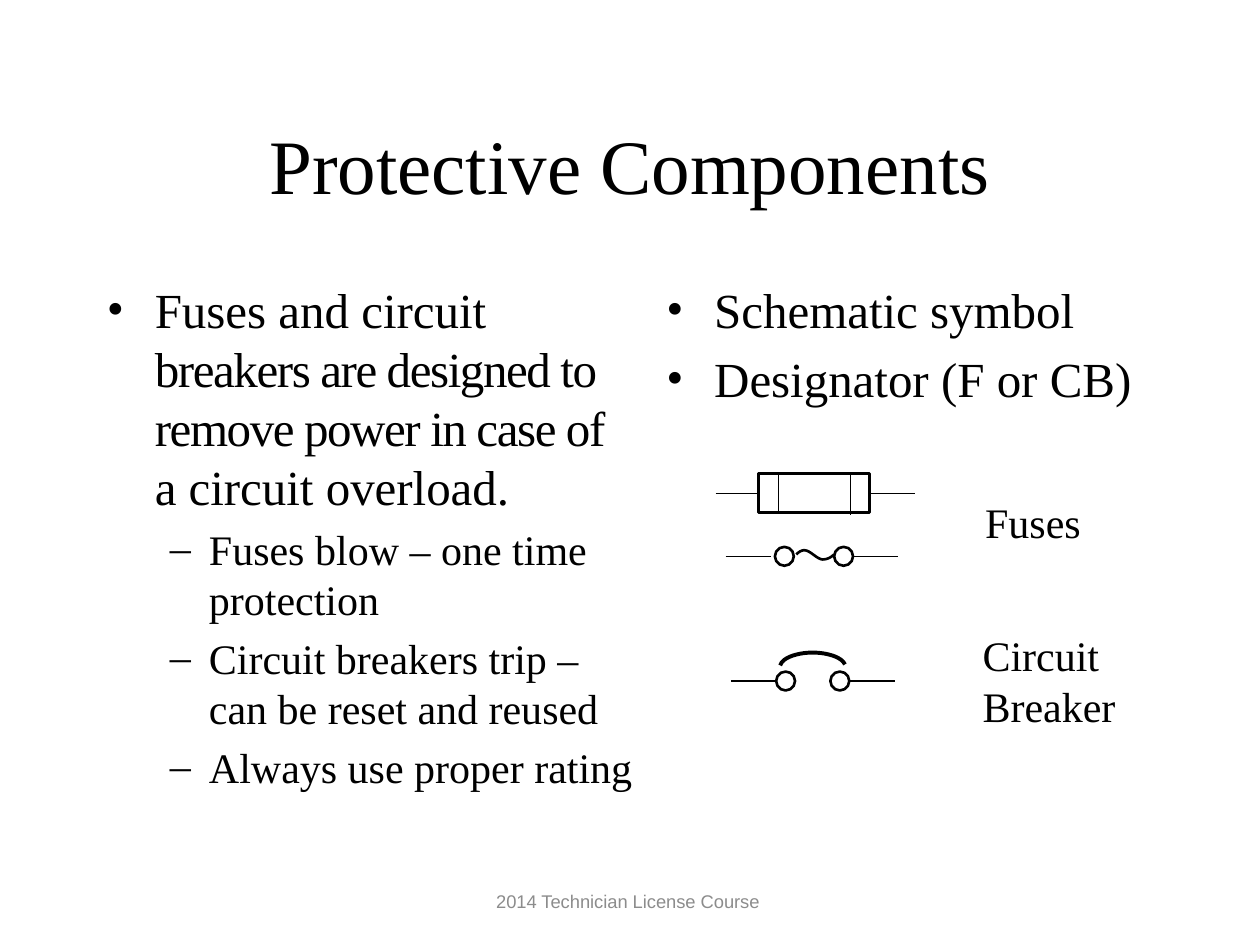
from lxml import etree
from pptx import Presentation
from pptx import util as u
from pptx.dml.color import RGBColor
from pptx.enum import shapes as s, text as t
from pptx.oxml.ns import qn

BLACK = RGBColor(0, 0, 0)
GRAY = RGBColor(0x8C, 0x8C, 0x8C)
SERIF = "Times New Roman"
COLS, ROWS = 100, 75
WIDTH, HEIGHT = u.Inches(10), u.Inches(7.5)
DOT = 1.5
LEVELS = [("•", 0.38, 0.38, 28), ("–", 0.81, 0.31, 24)]


def col(n):
    """Turn grid columns into a length."""
    return round(WIDTH * n / COLS)


def row(n):
    """Turn grid rows into a length."""
    return round(HEIGHT * n / ROWS)


def place(x, y, w, h):
    """Turn a grid box into left, top, width and height."""
    return col(x), row(y), col(w), row(h)


def style(para, size, name=SERIF, color=BLACK):
    """Set the font of a paragraph."""
    font = para.font
    font.size, font.name = u.Pt(size), name
    font.color.rgb = color


def frame(slide, box, wrap=True):
    """Add a text box and return its frame."""
    body = slide.shapes.add_textbox(*place(*box)).text_frame
    body.word_wrap = wrap
    return body


def center(slide, box, words, *look):
    """Write one line in the middle of a box."""
    body = frame(slide, box)
    body.vertical_anchor = t.MSO_ANCHOR.MIDDLE
    para = body.paragraphs[0]
    para.text, para.alignment = words, t.PP_ALIGN.CENTER
    style(para, *look)


def label(slide, box, lines):
    """Write an unwrapped label, one paragraph a line."""
    body = frame(slide, box, False)
    body.auto_size = t.MSO_AUTO_SIZE.SHAPE_TO_FIT_TEXT
    body.text = "\n".join(lines)
    for para in body.paragraphs:
        style(para, 24)


def bullets(slide, box, items):
    """Write a list of (level, runs), each run being (words, spacing)."""
    body = frame(slide, box)
    for i, (level, runs) in enumerate(items):
        para = body.add_paragraph() if i else body.paragraphs[0]
        mark, left, hang, size = LEVELS[level]
        para.level = level
        if i:
            para.space_before = u.Pt(size * 0.2)
        props = para._p.get_or_add_pPr()
        props.set("marL", str(u.Inches(left)))
        props.set("indent", str(-u.Inches(hang)))
        etree.SubElement(props, qn("a:buFont")).set("typeface", SERIF)
        etree.SubElement(props, qn("a:buChar")).set("char", mark)
        style(para, size)
        for words, space in runs:
            if words == "\n":
                para.add_line_break()
                continue
            run = para.add_run()
            run.text = words
            if space:
                run.font._element.set("spc", str(space))


def ink(shape, width):
    """Give a shape a plain black outline."""
    shape.shadow.inherit = False
    shape.fill.background()
    shape.line.color.rgb, shape.line.width = BLACK, u.Pt(width)
    return shape


def outline(slide, kind, box, width=1.5):
    """Add an unfilled preset shape."""
    return ink(slide.shapes.add_shape(kind, *place(*box)), width)


def wire(slide, x, y, dx=0, dy=0):
    """Draw a thin straight line."""
    line = slide.shapes.add_connector(
        s.MSO_CONNECTOR.STRAIGHT, col(x), row(y), col(x + dx), row(y + dy))
    line.line.color.rgb, line.line.width = BLACK, u.Pt(0.75)
    etree.SubElement(line._element.spPr, qn("a:effectLst"))
    return line


def curve(slide, start, arcs):
    """Draw an open line through cubic arcs."""
    points = [start]
    for a, b, end in arcs:
        first = points[-1]
        for i in range(1, 13):
            k = i / 12
            j = 1 - k
            points.append(tuple(
                j**3 * p + 3 * j * j * k * q + 3 * j * k * k * r + k**3 * e
                for p, q, r, e in zip(first, a, b, end)))
    path = [(col(x), row(y)) for x, y in points]
    build = slide.shapes.build_freeform(*path[0])
    build.add_line_segments(path[1:], close=False)
    ink(build.convert_to_shape(), 1.5)


def capsule(slide, box):
    """Draw the boxed fuse with its end caps and leads."""
    x, y, w, h = box
    lead, mid = 3.4, y + h / 2
    case = outline(slide, s.MSO_SHAPE.RECTANGLE, (x + lead, y, w - 2 * lead - 0.2, h))
    wire(slide, x + lead + 1.6, y, dy=h)
    wire(slide, x + w - lead - 1.7, y + 0.1, dy=h + 0.1)
    wire(slide, x, mid, lead).end_connect(case, 1)
    wire(slide, x + w - lead, mid, lead).begin_connect(case, 3)


def contacts(slide, box, near, far):
    """Draw two round contacts with a lead at each side."""
    x, y, w, h = box
    for at in (near, far):
        outline(slide, s.MSO_SHAPE.OVAL, (x + at, y, DOT, DOT))
    wire(slide, x, y + h / 2, 3.6)
    wire(slide, x + w - 3.6, y + h / 2, 3.6)


def link(slide, box):
    """Draw the open fuse: two contacts joined by a wave."""
    x, y = box[:2]
    contacts(slide, box, 3.9, 8.6)
    arcs = [((8.4, 0.8), (8.1, 1), (7.7, 1)),
            ((7.3, 1), (6.8, 0.4), (6.4, 0.3)),
            ((6.1, 0.2), (5.8, 0.4), (5.6, 0.6))]
    curve(slide, (x + 8.6, y + 0.6),
          [[(x + a, y + b) for a, b in arc] for arc in arcs])


def breaker(slide, box):
    """Draw the circuit breaker: two contacts under an arc."""
    x, y = box[:2]
    contacts(slide, box, 3.6, 7.9)
    bow = outline(slide, s.MSO_SHAPE.ARC, (x + 3.9, y - 1.5, 5.2, 2.3), 2.25)
    bow.adjustments[0], bow.adjustments[1] = 109.75, 213.2


def main():
    """Build and save the slide."""
    deck = Presentation()
    deck.slide_width, deck.slide_height = WIDTH, HEIGHT
    slide = deck.slides.add_slide(deck.slide_layouts[6])
    center(slide, (7.5, 6.7, 85, 12.5), "Protective Components", 44)
    bullets(slide, (7.5, 21.7, 43.9, 45), [
        (0, [("Fuses and circuit ", 0),
             ("breakers are designed to remove power in case of", -80),
             ("\n", 0), ("a circuit overload.", 0)]),
        (1, [("Fuses blow – one time protection", 0)]),
        (1, [("Circuit breakers trip – can be reset and reused", 0)]),
        (1, [("Always use proper rating", 0)])])
    bullets(slide, (51.9, 21.7, 40.6, 45), [
        (0, [("Schematic symbol", 0)]),
        (0, [("Designator (F or CB)", 0)])])
    capsule(slide, (56.8, 37.6, 15.8, 3.1))
    link(slide, (57.6, 43.4, 13.7, DOT))
    label(slide, (77.2, 38.9, 9.7, 5), ["Fuses"])
    breaker(slide, (58, 53.3, 13, DOT))
    label(slide, (77, 49.5, 12.7, 9.1), ["Circuit", "Breaker"])
    center(slide, (34.2, 69.5, 31.7, 4), "2014 Technician License Course ",
           10.5, "Arial", GRAY)
    deck.save("out.pptx")


if __name__ == "__main__":
    main()
